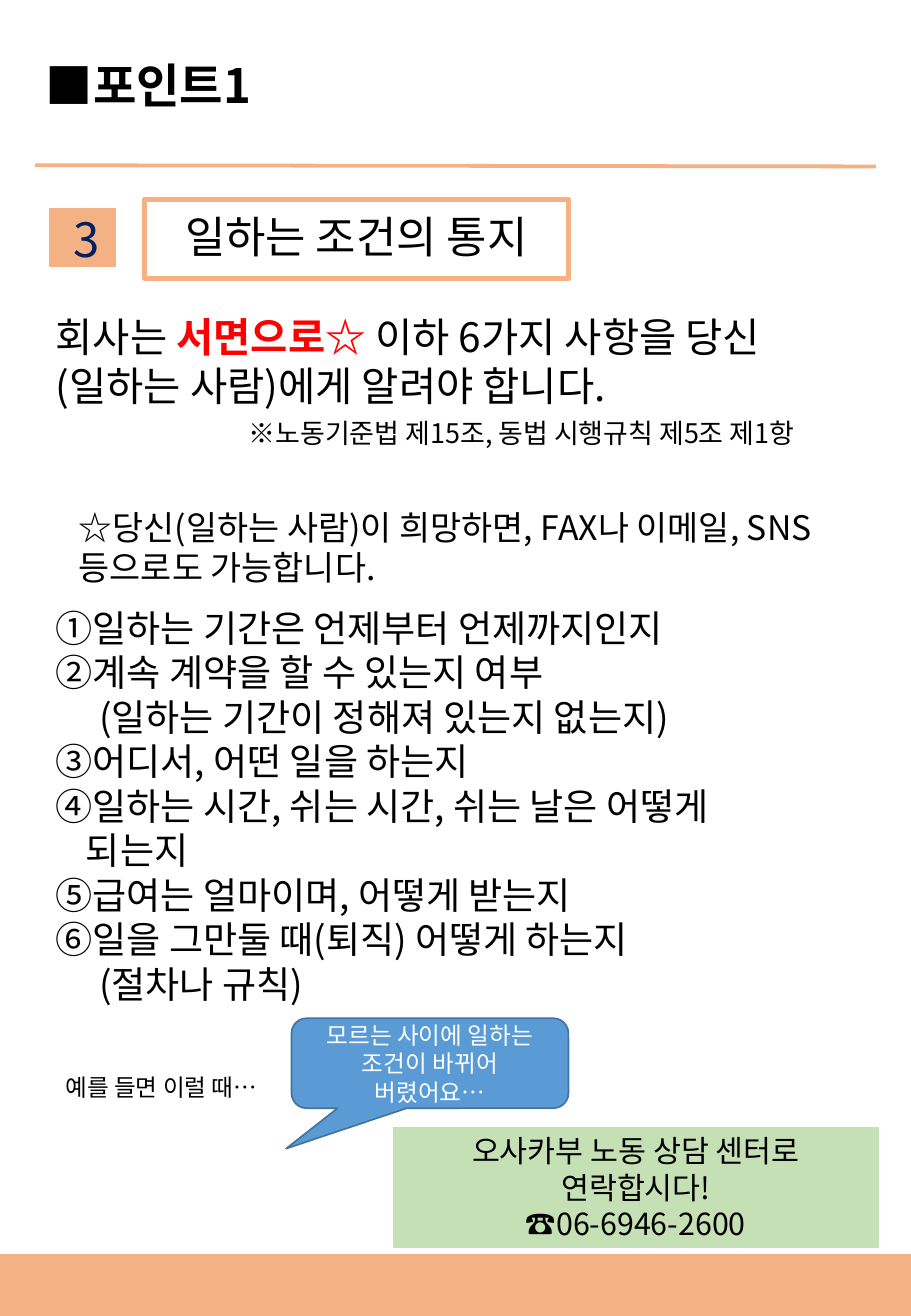
from lxml import etree
from pptx import Presentation
from pptx import util as u
from pptx.dml.color import RGBColor
from pptx.enum import shapes, text
from pptx.oxml.ns import qn

COLORS = {"orange": "F4B183", "white": "FFFFFF", "black": "000000", "red": "FF0000",
          "navy": "002060", "blue": "5B9BD5", "blue_edge": "43739E", "green": "C5E0B4"}
KOREAN, JAPANESE = "Noto Sans CJK KR", "Noto Sans CJK JP"
WIDTH, HEIGHT = u.Inches(7.5), u.Inches(10.83)
COLUMNS, ROWS = 75, 108.3
CENTER = text.PP_ALIGN.CENTER


class Leaflet:
    def __init__(self, slide):
        self.slide = slide

    def place(self, left, top, width, height):
        column, row = WIDTH / COLUMNS, HEIGHT / ROWS
        return [round(n * cell) for n, cell in
                zip((left, top, width, height), (column, row, column, row))]

    def color(self, name):
        return RGBColor.from_string(COLORS[name])

    def format_run(self, run, size, color="black", bold=False, font=KOREAN):
        run.font.size, run.font.bold, run.font.name = u.Pt(size), bold, font
        run.font.color.rgb = self.color(color)
        etree.SubElement(run.font._element, qn("a:ea"), typeface=font)

    def label(self, shape, lines, size, color="black", align=None):
        frame = shape.text_frame
        frame.word_wrap = True
        frame.text = "\n".join(lines)
        for paragraph in frame.paragraphs:
            paragraph.alignment = align
            for run in paragraph.runs:
                self.format_run(run, size, color)

    def textbox(self, place, lines=(), size=14, color="black", align=None):
        shape = self.slide.shapes.add_textbox(*self.place(*place))
        shape.text_frame.word_wrap = True
        if lines:
            self.label(shape, lines, size, color, align)
        return shape

    def mixed(self, place, pieces):
        paragraph = self.textbox(place).text_frame.paragraphs[0]
        for words, style in pieces:
            run = paragraph.add_run()
            run.text = words
            self.format_run(run, **style)

    def panel(self, place, fill, line, weight=1, kind=shapes.MSO_SHAPE.RECTANGLE):
        shape = self.slide.shapes.add_shape(kind, *self.place(*place))
        shape.shadow.inherit = False
        shape.fill.solid()
        shape.fill.fore_color.rgb = self.color(fill)
        shape.line.color.rgb = self.color(line)
        shape.line.width = u.Pt(weight)
        shape.text_frame.vertical_anchor = text.MSO_ANCHOR.MIDDLE
        return shape

    def rule(self, start_end, color, weight):
        connector = self.slide.shapes.add_connector(
            shapes.MSO_CONNECTOR.STRAIGHT, *self.place(*start_end))
        connector.line.color.rgb = self.color(color)
        connector.line.width = u.Pt(weight)
        etree.SubElement(connector._element.spPr, qn("a:effectLst"))

    def indent(self, shape, margins):
        for number, margin in margins.items():
            properties = shape.text_frame.paragraphs[number]._p.get_or_add_pPr()
            properties.set("marL", str(u.Inches(margin)))


def main():
    presentation = Presentation()
    presentation.slide_width, presentation.slide_height = WIDTH, HEIGHT
    leaflet = Leaflet(presentation.slides.add_slide(presentation.slide_layouts[6]))

    leaflet.mixed((2.8, 4.1, 45.6, 5.7), [
        ("■", dict(size=28, bold=True, font=JAPANESE)),
        ("포인트1", dict(size=28, bold=True))])
    leaflet.rule((2.9, 13.6, 72.1, 13.7), "orange", 2.25)

    leaflet.panel((4.1, 17.2, 5.4, 4.7), "orange", "orange", 0.75)
    number = leaflet.textbox((4.8, 16.8, 4.7, 5.7), ["3"], 28, "navy", CENTER)
    number.text_frame.margin_left = number.text_frame.margin_right = u.Inches(0.03)

    heading = leaflet.panel((11.9, 16.4, 34.9, 6.5), "white", "orange", 3)
    leaflet.label(heading, ["일하는 조건의 통지"], 26, align=CENTER)
    paragraph = heading.text_frame.paragraphs[0]
    paragraph.line_spacing, paragraph.space_before = 0.9, u.Pt(10)

    leaflet.mixed((3.6, 25.2, 68.7, 9), [
        ("회사는 ", dict(size=24)),
        ("서면으로☆ ", dict(size=24, color="red", bold=True)),
        ("이하 6가지 사항을 당신(일하는 사람)에게 알려야 합니다.", dict(size=24))])
    leaflet.textbox((19.5, 33.8, 51.9, 3.7),
                    ["※노동기준법 제15조, 동법 시행규칙 제5조 제1항"], 16)
    leaflet.textbox((5.5, 41.2, 63.2, 7.7),
                    ["☆당신(일하는 사람)이 희망하면, FAX나 이메일, SNS등으로도 가능합니다."], 20)

    conditions = leaflet.textbox((3.6, 49.3, 68.7, 34), [
        "①일하는 기간은 언제부터 언제까지인지",
        "②계속 계약을 할 수 있는지 여부",
        "(일하는 기간이 정해져 있는지 없는지)",
        "③어디서, 어떤 일을 하는지",
        "④일하는 시간, 쉬는 시간, 쉬는 날은 어떻게",
        "되는지",
        "⑤급여는 얼마이며, 어떻게 받는지",
        "⑥일을 그만둘 때(퇴직) 어떻게 하는지",
        "(절차나 규칙)"], 22)
    leaflet.indent(conditions, {2: 0.36, 5: 0.25, 8: 0.36})

    leaflet.textbox((4.4, 87.8, 20.2, 3.4), ["예를 들면 이럴 때…"], 14)
    callout = leaflet.panel((24, 83.8, 22.8, 7.4), "blue", "blue_edge",
                            kind=shapes.MSO_SHAPE.ROUNDED_RECTANGULAR_CALLOUT)
    callout.adjustments[0], callout.adjustments[1] = -0.52, 0.95
    leaflet.label(callout, ["모르는 사이에 일하는 조건이 바뀌어 버렸어요…"], 14, "white", CENTER)

    contact = leaflet.panel((32.4, 92.8, 39.9, 9.8), "green", "green")
    leaflet.label(contact, ["오사카부 노동 상담 센터로", "연락합시다!", "☎06-6946-2600"],
                  18, align=CENTER)
    leaflet.panel((0, 103.3, COLUMNS, 5), "orange", "orange")

    presentation.save("out.pptx")


if __name__ == "__main__":
    main()
